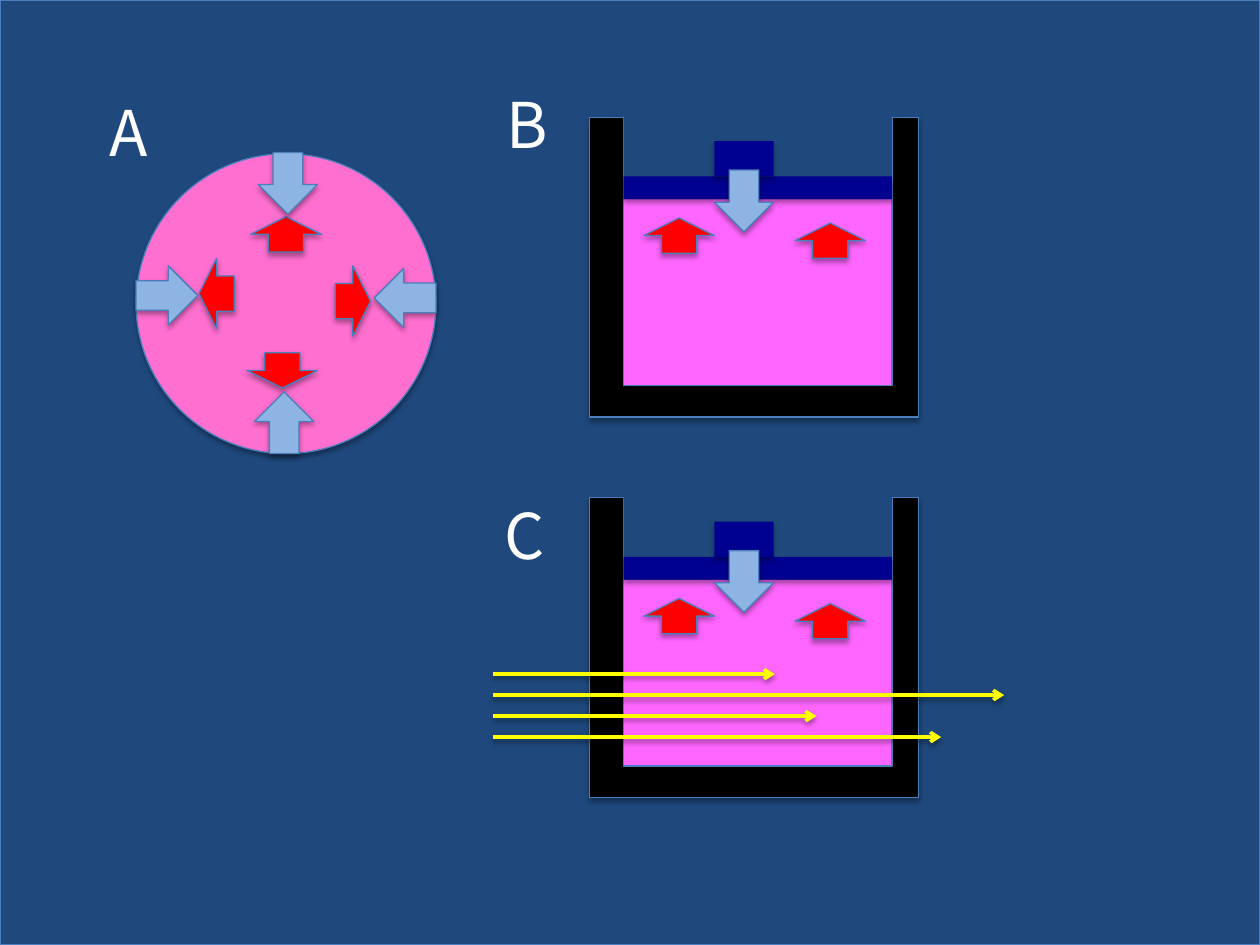
from lxml import etree
from pptx import Presentation
from pptx.dml.color import RGBColor
from pptx.enum.shapes import MSO_CONNECTOR, MSO_SHAPE as SHAPE
from pptx.enum.text import MSO_AUTO_SIZE
from pptx.oxml import parse_xml
from pptx.oxml.ns import nsdecls, qn
from pptx.util import Inches, Pt

COLORS = {
    "backdrop": "1F497D", "outline": "4B7EBC", "disc": "FF6FCF",
    "wall": "000000", "filling": "FF66FF", "piston": "000090",
    "pressure": "8EB4E3", "reaction": "FF0000", "ray": "FFFF00",
    "label": "FFFFFF",
}
FONT = "Noto Sans CJK JP"


def add_shadow(item, opacity=35, distance=1.8):
    """Replace the theme shadow with a soft one falling straight down."""
    properties = item._element.spPr
    for old in properties.findall(qn("a:effectLst")):
        properties.remove(old)
    properties.append(parse_xml(
        f'<a:effectLst {nsdecls("a")}><a:outerShdw blurRad="{Pt(3.1)}" '
        f'dist="{Pt(distance)}" dir="5400000" rotWithShape="0">'
        f'<a:srgbClr val="000000"><a:alpha val="{opacity * 1000}"/></a:srgbClr>'
        '</a:outerShdw></a:effectLst>'))


def add_part(kind, left, top, width, height, color,
             outlined=True, shadowed=True, turn=0):
    part = page.shapes.add_shape(kind, Inches(left), Inches(top),
                                 Inches(width), Inches(height))
    part.rotation = turn
    part.fill.solid()
    part.fill.fore_color.rgb = RGBColor.from_string(COLORS[color])
    if outlined:
        part.line.color.rgb = RGBColor.from_string(COLORS["outline"])
        part.line.width = Pt(0.75)
    else:
        part.line.fill.background()
    part.shadow.inherit = False
    if shadowed:
        add_shadow(part)


deck = Presentation()
deck.slide_width, deck.slide_height = Inches(10), Inches(7.5)
page = deck.slides.add_slide(deck.slide_layouts[6])

add_part(SHAPE.RECTANGLE, 0, 0, 10, 7.5, "backdrop")

# A: disc pressed from four sides
add_part(SHAPE.OVAL, 1.08, 1.22, 2.38, 2.38, "disc")
for left, top, turn in [(1.99, 1.72, 0), (1.96, 2.8, 180),
                        (2.52, 2.25, 90), (1.44, 2.19, 270)]:
    add_part(SHAPE.UP_ARROW, left, top, 0.56, 0.28, "reaction", turn=turn)
for left, top, turn in [(2.05, 1.21, 0), (2.02, 3.11, 180),
                        (2.98, 2.12, 90), (1.09, 2.1, 270)]:
    add_part(SHAPE.DOWN_ARROW, left, top, 0.47, 0.49, "pressure", turn=turn)

# B and C: vessel closed by a piston
for top in (0.93, 3.95):
    add_part(SHAPE.RECTANGLE, 4.68, top, 2.61, 2.38, "wall")
    add_part(SHAPE.RECTANGLE, 4.95, top, 2.13, 2.13, "filling")
    add_part(SHAPE.RECTANGLE, 4.95, top - 0.17, 2.13, 0.82, "backdrop",
             outlined=False, shadowed=False)
    add_part(SHAPE.RECTANGLE, 4.95, top + 0.47, 2.13, 0.18, "piston", outlined=False)
    add_part(SHAPE.RECTANGLE, 5.67, top + 0.19, 0.47, 0.28, "piston", outlined=False)
    add_part(SHAPE.DOWN_ARROW, 5.67, top + 0.42, 0.47, 0.49, "pressure")
    add_part(SHAPE.UP_ARROW, 5.11, top + 0.8, 0.56, 0.28, "reaction")
    add_part(SHAPE.UP_ARROW, 6.31, top + 0.84, 0.56, 0.28, "reaction")

# C: rays entering the vessel
for row, end in enumerate([6.15, 7.97, 6.48, 7.47]):
    height = Inches(5.35 + row / 6)
    ray = page.shapes.add_connector(MSO_CONNECTOR.STRAIGHT, Inches(3.91), height,
                                    Inches(end), height)
    ray.line.color.rgb = RGBColor.from_string(COLORS["ray"])
    ray.line.width = Pt(2)
    etree.SubElement(ray.line._get_or_add_ln(), qn("a:tailEnd"), type="arrow")
    add_shadow(ray, opacity=38, distance=1.6)

for letter, left, top in [("A", 0.77, 0.69), ("B", 3.92, 0.63), ("C", 3.91, 3.89)]:
    box = page.shapes.add_textbox(Inches(left), Inches(top), Inches(0.63), Inches(0.71))
    frame = box.text_frame
    frame.word_wrap = True
    frame.auto_size = MSO_AUTO_SIZE.SHAPE_TO_FIT_TEXT
    para = frame.paragraphs[0]
    para.text = letter
    para.font.name = FONT
    para.font.size = Pt(36)
    para.font.color.rgb = RGBColor.from_string(COLORS["label"])

deck.save("out.pptx")
